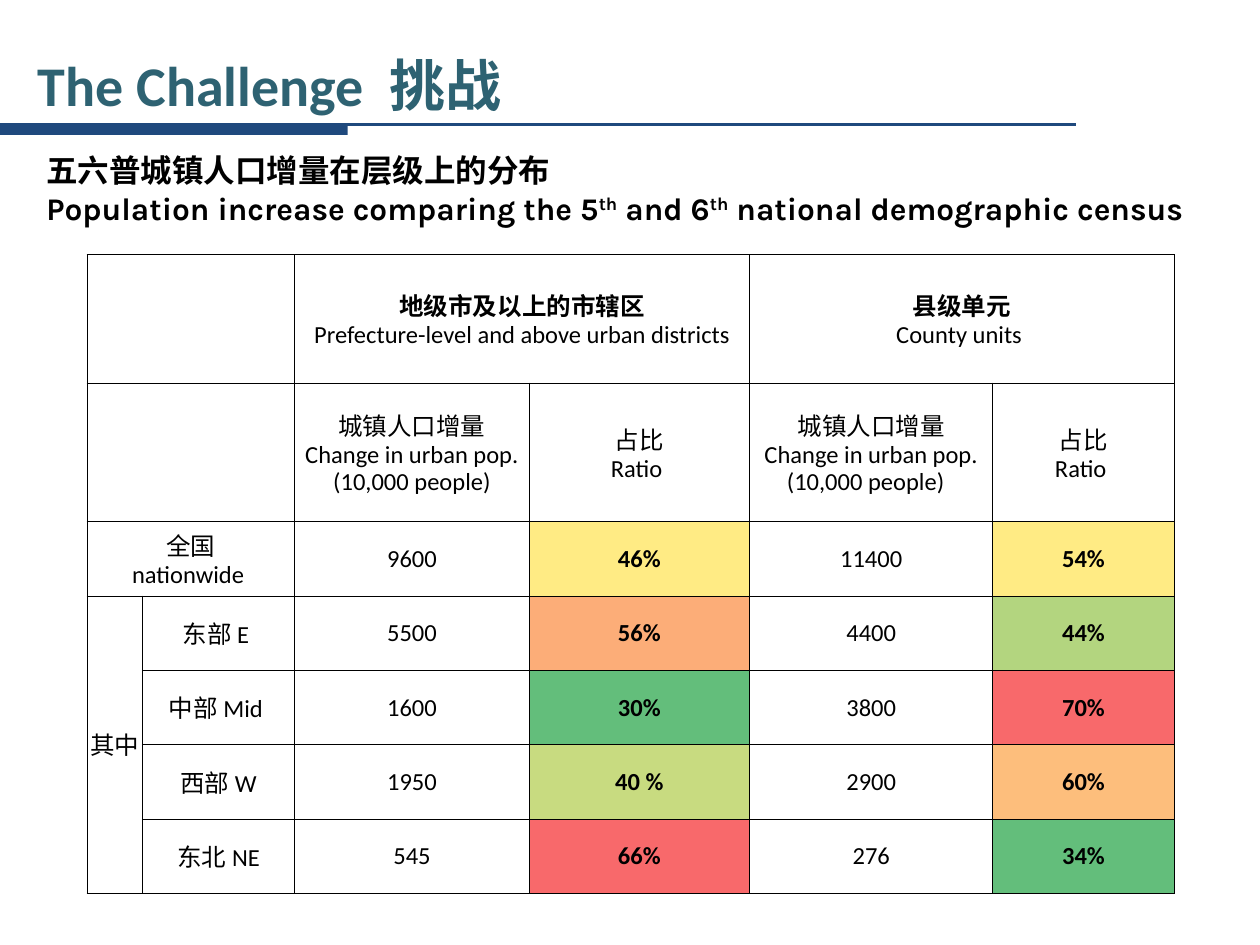
from dataclasses import dataclass

from lxml import etree
from pptx import Presentation, util as u
from pptx.dml.color import RGBColor
from pptx.enum import shapes, text
from pptx.oxml.ns import qn

WIDTH, HEIGHT = u.Inches(10), u.Inches(7.5)


@dataclass(frozen=True)
class Theme:
    """Colours, fonts and type sizes of the slide."""
    navy: str = "1F497D"
    teal: str = "2E6272"
    black: str = "000000"
    yellow: str = "FFEB84"
    orange: str = "FCAD78"
    amber: str = "FDBE7C"
    lime: str = "C8DB80"
    green: str = "B3D57F"
    emerald: str = "63BE7B"
    red: str = "F8696B"
    body_font: str = "Calibri"
    lead_font: str = "Karla"
    title_size: int = 32
    lead_size: int = 18
    cell_size: int = 14


THEME = Theme()
COLUMNS = (4.4, 12.1, 18.6, 17.5, 19.3, 14.4)
ROWS = (13.6, 14.67) + (7.87,) * 5
HEADINGS = (
    (0, 2, "地级市及以上的市辖区", "Prefecture-level and above urban districts"),
    (0, 4, "县级单元", "County units "),
    (1, 2, "城镇人口增量", "Change in urban pop. (10,000 people)"),
    (1, 3, "占比", "Ratio "),
    (1, 4, "城镇人口增量", "Change in urban pop. (10,000 people)  "),
    (1, 5, "占比", "Ratio "),
    (2, 0, "全国", "nationwide "),
)
REGIONS = ("东部 E ", "中部 Mid ", "西部 W", "东北 NE")
FIGURES = (
    ("9600", "46%", THEME.yellow, "11400", "54%", THEME.yellow),
    ("5500", "56%", THEME.orange, "4400", "44%", THEME.green),
    ("1600", "30%", THEME.emerald, "3800", "70%", THEME.red),
    ("1950", "40 %", THEME.lime, "2900", "60%", THEME.amber),
    ("545", "66%", THEME.red, "276", "34%", THEME.emerald),
)
MERGES = ((0, 0, 0, 1), (0, 2, 0, 3), (0, 4, 0, 5),
          (1, 0, 1, 1), (2, 0, 2, 1), (3, 0, 6, 0))


def across(percent):
    """Return a share of the slide's width."""
    return round(WIDTH * percent / 100)


def down(percent):
    """Return a share of the slide's height."""
    return round(HEIGHT * percent / 100)


def place(left, top, width, height):
    """Turn shares of the slide into a frame."""
    return across(left), down(top), across(width), down(height)


def add_span(para, words, size, font=THEME.body_font, color=THEME.black,
             bold=False, raised=False):
    """Add one formatted run to a paragraph."""
    span = para.add_run()
    span.text = words
    span.font.size = u.Pt(size)
    span.font.name = font
    span.font.bold = bold
    span.font.color.rgb = RGBColor.from_string(color)
    if raised:
        span.font._element.set("baseline", "30000")


def add_rule(page):
    """Draw the thin line and thick bar under the title."""
    line = page.shapes.add_connector(shapes.MSO_CONNECTOR.STRAIGHT, 0,
                                     down(13.2), across(85.4), down(13.2))
    line.line.color.rgb = RGBColor.from_string(THEME.navy)
    line.line.width = u.Pt(1.5)
    etree.SubElement(line._element.spPr, qn("a:effectLst"))
    bar = page.shapes.add_shape(shapes.MSO_SHAPE.RECTANGLE,
                                *place(0, 13.2, 27.6, 1.07))
    bar.shadow.inherit = False
    bar.fill.solid()
    bar.fill.fore_color.rgb = RGBColor.from_string(THEME.navy)
    bar.line.fill.background()


def set_title(page):
    """Move and format the title placeholder."""
    box = page.shapes.title
    box.left, box.top, box.width, box.height = place(2, 4.8, 84.2, 8.27)
    box.text_frame.vertical_anchor = text.MSO_ANCHOR.MIDDLE
    para = box.text_frame.paragraphs[0]
    para.alignment = text.PP_ALIGN.LEFT
    add_span(para, "The Challenge  挑战", THEME.title_size,
             color=THEME.teal, bold=True)


def add_lead(page):
    """Add the bilingual heading above the table."""
    frame = page.shapes.add_textbox(*place(2.7, 15.33, 93.7, 9.47)).text_frame
    frame.word_wrap = False
    add_span(frame.paragraphs[0], "五六普城镇人口增量在层级上的分布",
             THEME.lead_size, THEME.lead_font, bold=True)
    para = frame.add_paragraph()
    parts = ("Population increase comparing the 5", "th", " and 6", "th",
             " national demographic census")
    for part in parts:
        add_span(para, part, THEME.lead_size, THEME.lead_font,
                 bold=True, raised=part == "th")


def format_cell(cell):
    """Give a cell thin black borders, no fill and tight margins."""
    properties = cell._tc.get_or_add_tcPr()
    for side in ("lnL", "lnR", "lnT", "lnB"):
        border = etree.SubElement(properties, qn(f"a:{side}"), w=str(u.Pt(0.5)))
        fill = etree.SubElement(border, qn("a:solidFill"))
        etree.SubElement(fill, qn("a:srgbClr"), val=THEME.black)
    cell.fill.background()
    cell.vertical_anchor = text.MSO_ANCHOR.MIDDLE
    cell.margin_left = cell.margin_right = cell.margin_top = u.Inches(0.01)
    cell.margin_bottom = 0


def write_cell(cell, *lines, bold_first=False, color=None):
    """Write centred lines into a cell and colour it if asked."""
    frame = cell.text_frame
    for index, words in enumerate(lines):
        para = frame.add_paragraph() if index else frame.paragraphs[0]
        para.alignment = text.PP_ALIGN.CENTER
        para.line_spacing = 0.9
        add_span(para, words, THEME.cell_size, bold=bold_first and index == 0)
    if color:
        cell.fill.solid()
        cell.fill.fore_color.rgb = RGBColor.from_string(color)


def add_census_table(page):
    """Add the table of urban population change by region."""
    frame = place(6.9, 26.93, sum(COLUMNS), sum(ROWS))
    table = page.shapes.add_table(len(ROWS), len(COLUMNS), *frame).table
    table.first_row = table.horz_banding = False
    for column, share in zip(table.columns, COLUMNS):
        column.width = across(share)
    for row, share in zip(table.rows, ROWS):
        row.height = down(share)
    for cell in table.iter_cells():
        format_cell(cell)
    for top, left, bottom, right in MERGES:
        table.cell(top, left).merge(table.cell(bottom, right))
    for row, column, chinese, english in HEADINGS:
        write_cell(table.cell(row, column), chinese, english,
                   bold_first=row == 0)
    write_cell(table.cell(3, 0), "其中")
    for row, region in enumerate(REGIONS, 3):
        write_cell(table.cell(row, 1), region)
    for row, figures in enumerate(FIGURES, 2):
        for column, start in ((2, 0), (4, 3)):
            change, ratio, color = figures[start:start + 3]
            write_cell(table.cell(row, column), change)
            write_cell(table.cell(row, column + 1), ratio,
                       bold_first=True, color=color)


def main():
    """Build and save the slide."""
    deck = Presentation()
    deck.slide_width, deck.slide_height = WIDTH, HEIGHT
    page = deck.slides.add_slide(deck.slide_layouts[5])
    add_rule(page)
    set_title(page)
    add_census_table(page)
    add_lead(page)
    deck.save("out.pptx")


if __name__ == "__main__":
    main()
